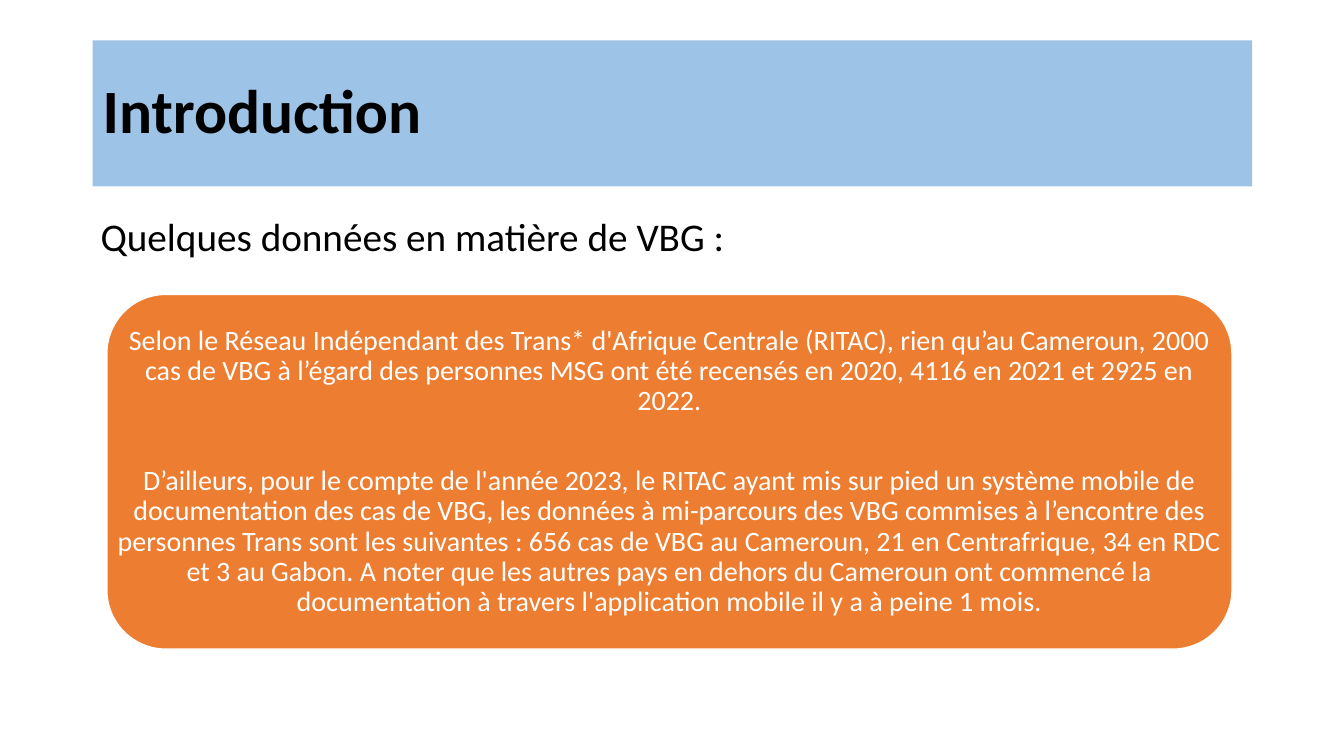
from dataclasses import dataclass

from pptx import Presentation
from pptx.dml.color import RGBColor
from pptx.enum.shapes import MSO_SHAPE
from pptx.enum.text import MSO_ANCHOR, PP_ALIGN
from pptx.util import Inches, Pt


@dataclass(frozen=True)
class Theme:
    font: str = "Calibri"
    banner: RGBColor = RGBColor(0x9D, 0xC3, 0xE6)
    panel: RGBColor = RGBColor(0xED, 0x7D, 0x31)
    dark: RGBColor = RGBColor(0, 0, 0)
    light: RGBColor = RGBColor(0xFF, 0xFF, 0xFF)
    title_size: Pt = Pt(44)
    lead_size: Pt = Pt(28)
    panel_size: Pt = Pt(20)
    panel_gap: Pt = Pt(35.5)
    line_spacing: float = 0.9


THEME = Theme()

TITLE = "Introduction"
LEAD = "Quelques données en matière de VBG :"
FINDINGS = [
    "Selon le Réseau Indépendant des Trans* d'Afrique Centrale (RITAC), rien "
    "qu’au Cameroun, 2000 cas de VBG à l’égard des personnes MSG ont été "
    "recensés en 2020, 4116 en 2021 et 2925 en 2022.",
    "D’ailleurs, pour le compte de l'année 2023, le RITAC ayant mis sur pied un "
    "système mobile de documentation des cas de VBG, les données à mi-parcours "
    "des VBG commises à l’encontre des personnes Trans sont les suivantes : "
    "656 cas de VBG au Cameroun, 21 en Centrafrique, 34 en RDC et 3 au Gabon. "
    "A noter que les autres pays en dehors du Cameroun ont commencé la "
    "documentation à travers l'application mobile il y a à peine 1 mois.",
]


def inches(box):
    return [Inches(length) for length in box]


def write(frame, paragraphs, size, color, align=PP_ALIGN.LEFT, gap=Pt(0), bold=False):
    """Fill a text frame, with a gap between its paragraphs."""
    frame.word_wrap = True
    frame.text = "\n".join(paragraphs)
    for index, paragraph in enumerate(frame.paragraphs):
        paragraph.alignment = align
        paragraph.line_spacing = THEME.line_spacing
        paragraph.space_before = gap if index else Pt(0)
        font = paragraph.runs[0].font
        font.name, font.size, font.bold = THEME.font, size, bold
        font.color.rgb = color


def add_banner(slide, box):
    banner = slide.shapes.add_shape(MSO_SHAPE.RECTANGLE, *inches(box))
    banner.shadow.inherit = False
    banner.fill.solid()
    banner.fill.fore_color.rgb = THEME.banner
    banner.line.fill.background()
    banner.text_frame.vertical_anchor = MSO_ANCHOR.MIDDLE
    write(banner.text_frame, [TITLE], THEME.title_size, THEME.dark, bold=True)


def add_lead(slide, box):
    lead = slide.shapes.add_textbox(*inches(box))
    write(lead.text_frame, [LEAD], THEME.lead_size, THEME.dark)


def add_findings(slide, box):
    """Rounded panel, with text over its full width clear of the corner insets."""
    panel = slide.shapes.add_shape(MSO_SHAPE.ROUNDED_RECTANGLE, *inches(box))
    panel.shadow.inherit = False
    panel.fill.solid()
    panel.fill.fore_color.rgb = THEME.panel
    panel.line.color.rgb = THEME.light
    panel.line.width = Pt(1)

    frame = slide.shapes.add_textbox(*inches(box)).text_frame
    frame.margin_left = frame.margin_right = Inches(0.08)
    frame.margin_top = frame.margin_bottom = Inches(0.04)
    frame.vertical_anchor = MSO_ANCHOR.MIDDLE
    write(frame, FINDINGS, THEME.panel_size, THEME.light,
          PP_ALIGN.CENTER, THEME.panel_gap)


def main():
    deck = Presentation()
    deck.slide_width, deck.slide_height = Inches(13.33), Inches(7.5)
    slide = deck.slides.add_slide(deck.slide_layouts[6])
    add_banner(slide, (0.92, 0.4, 11.5, 1.45))
    add_lead(slide, (0.9, 2.11, 11.5, 0.6))
    add_findings(slide, (1.06, 2.92, 11.16, 3.52))
    deck.save("out.pptx")


if __name__ == "__main__":
    main()
